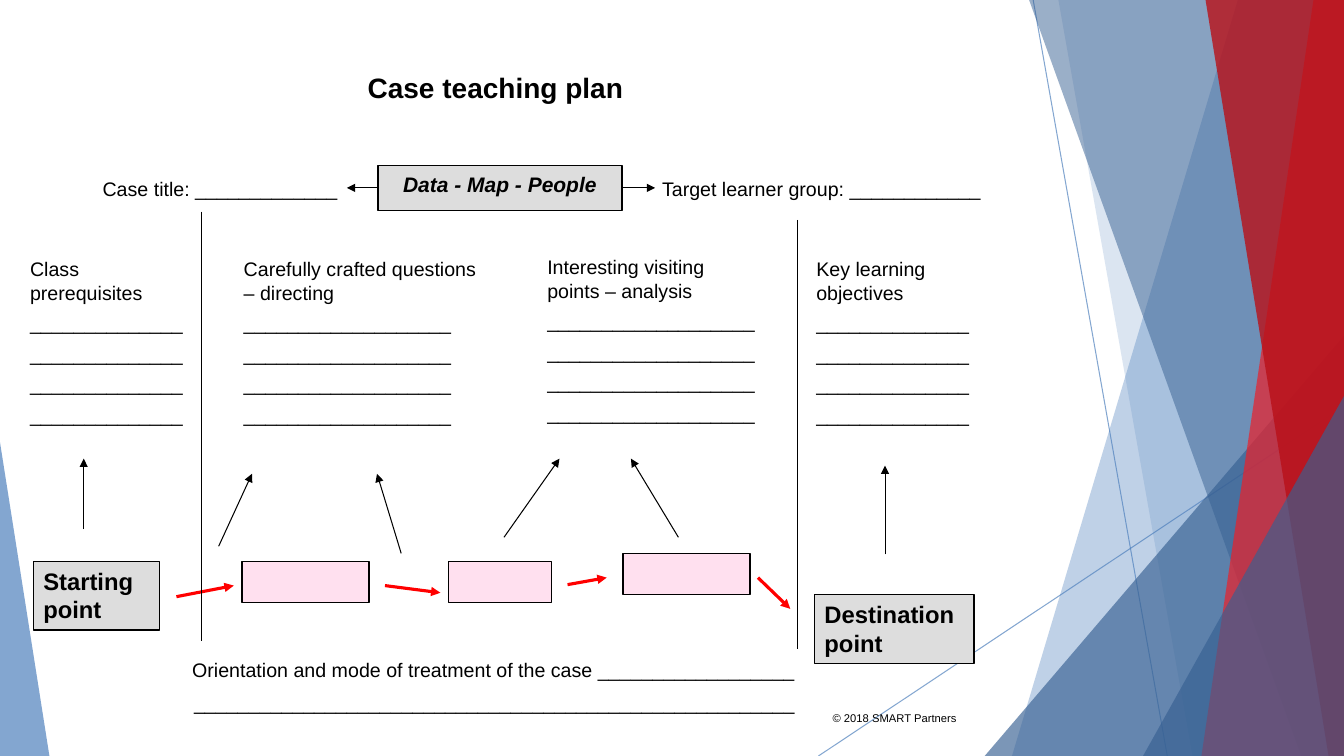
from dataclasses import dataclass, field
from typing import Any

import pptx
import pptx.dml.color
import pptx.enum.shapes
import pptx.enum.text
import pptx.oxml.ns
import pptx.util
from lxml import etree

Pt = pptx.util.Pt
qn = pptx.oxml.ns.qn
SHAPE = pptx.enum.shapes.MSO_SHAPE
ALIGN = pptx.enum.text.PP_ALIGN
ANCHOR = pptx.enum.text.MSO_ANCHOR
FIT = pptx.enum.text.MSO_AUTO_SIZE

WIDE, HIGH = 960, 540
COLORS = {
    "black": "000000", "grey": "DDDDDD", "pink": "FF99CC", "arrow": "FF0000",
    "blue": "4F81BD", "navy": "376092", "red": "EC1F29", "dark": "B91018",
}


@dataclass
class Facet:
    """A polygon of the backdrop; alpha is in percent."""
    points: list[tuple[float, float]]
    color: str
    alpha: int


@dataclass
class Line:
    start: tuple[float, float]
    end: tuple[float, float]
    color: str = "black"
    width: float = 0.75
    head: bool = True
    alpha: int = 100


@dataclass
class Label:
    """Text lines in a frame, with a line spacing for each line."""
    frame: tuple[float, float, float, float]
    lines: list[str]
    spaces: list[float] = field(default_factory=list)
    size: float = 14
    align: Any = ALIGN.LEFT
    style: dict[str, bool] = field(default_factory=dict)


@dataclass
class Box:
    label: Label
    color: str = "grey"
    alpha: int = 100


def band(top: float, base: float, color: str, alpha: int) -> Facet:
    """Reach from a slanted left edge to the right side of the slide."""
    return Facet([(top, 0), (WIDE, 0), (WIDE, HIGH), (base, HIGH)], color, alpha)


def wedge(side: float, top: float, tip: float, color: str, alpha: int) -> Facet:
    """Stand a right triangle against one side of the slide."""
    return Facet([(side, top), (side, HIGH), (tip, HIGH)], color, alpha)


def column(left: float, top: float, width: float, heads: list[str], dashes: int) -> Label:
    """Put four ruled lines under a heading."""
    return Label((left, top, width, 130), heads + ["_" * dashes] * 4,
                 [1.0] * len(heads) + [1.3] * 4)


def rgb(name: str) -> pptx.dml.color.RGBColor:
    return pptx.dml.color.RGBColor.from_string(COLORS[name])


def fade(shape: Any, alpha: int) -> None:
    """Make the first colour of the shape see-through."""
    if alpha < 100:
        color = next(shape.element.iter(qn("a:srgbClr")))
        etree.SubElement(color, qn("a:alpha"), val=str(alpha * 1000))


def paint(shape: Any, color: str, alpha: int) -> None:
    shape.shadow.inherit = False
    shape.fill.solid()
    shape.fill.fore_color.rgb = rgb(color)
    fade(shape, alpha)


def write(shape: Any, label: Label, anchor: Any = ANCHOR.TOP) -> None:
    frame = shape.text_frame
    layout = {"word_wrap": True, "auto_size": FIT.NONE, "vertical_anchor": anchor}
    for name, value in layout.items():
        setattr(frame, name, value)
    form = {"name": "Arial", "size": Pt(label.size), **label.style}
    spaces = label.spaces or [1.0] * len(label.lines)
    for row, (text, space) in enumerate(zip(label.lines, spaces)):
        para = frame.add_paragraph() if row else frame.paragraphs[0]
        para.text, para.alignment, para.line_spacing = text, label.align, space
        for name, value in form.items():
            setattr(para.runs[0].font, name, value)
        para.runs[0].font.color.rgb = rgb("black")


def draw_facet(shapes: Any, facet: Facet) -> None:
    spots = [(Pt(x), Pt(y)) for x, y in facet.points]
    pen = shapes.build_freeform(*spots[0])
    pen.add_line_segments(spots[1:], close=True)
    shape = pen.convert_to_shape()
    paint(shape, facet.color, facet.alpha)
    shape.line.fill.background()


def draw_line(shapes: Any, line: Line) -> Any:
    ends = [Pt(value) for value in line.start + line.end]
    link = shapes.add_connector(pptx.enum.shapes.MSO_CONNECTOR.STRAIGHT, *ends)
    link.line.color.rgb = rgb(line.color)
    link.line.width = Pt(line.width)
    fade(link, line.alpha)
    if line.head:
        etree.SubElement(link.line._get_or_add_ln(), qn("a:tailEnd"), type="triangle")
    etree.SubElement(link.element.spPr, qn("a:effectLst"))
    return link


def draw_box(shapes: Any, box: Box) -> Any:
    shape = shapes.add_shape(SHAPE.RECTANGLE, *map(Pt, box.label.frame))
    paint(shape, box.color, box.alpha)
    shape.line.color.rgb = rgb("black")
    shape.line.width = Pt(1)
    write(shape, box.label)
    return shape


def draw_label(shapes: Any, label: Label) -> None:
    write(shapes.add_textbox(*map(Pt, label.frame)), label)


BOLD = {"bold": True}
TITLE = Label((216, 46.8, 275.8, 31), ["Case teaching plan"], size=20,
              align=ALIGN.CENTER, style=BOLD)
RAYS = [
    Line((738, 0), (833.8, HIGH), "blue", head=False, alpha=70),
    Line((WIDE, 290.2), (584.6, HIGH), "blue", head=False, alpha=70),
]
FACETS = [
    band(884.2, 722.9, "blue", 36),
    band(756, 851.8, "blue", 20),
    wedge(WIDE, 239.8, 703.4, "navy", 66),
    band(735.1, 929.5, "navy", 50),
    band(938.2, 858.2, "red", 70),
    band(861.1, 949, "dark", 80),
    wedge(WIDE, 283, 816.5, "navy", 66),
    wedge(0, 316, 35.3, "blue", 70),
]
HUB = Box(Label((270, 118, 174.2, 32.4), ["Data - Map - People"], [1.05], 15,
                ALIGN.CENTER, {"bold": True, "italic": True}))
ENDS = [
    Box(Label((23.8, 401, 90, 49), ["Starting point"], size=17, style=BOLD)),
    Box(Label((581.8, 424.8, 113.8, 49), ["Destination", "point"], size=17, style=BOLD)),
]
STOPS = [Box(Label((left, top, width, 29.5), []), "pink", 30)
         for left, top, width in [(172.8, 401, 90.7), (320.4, 401, 73.4), (445, 395.3, 90.7)]]
ROUTE = [Line(start, end, "arrow", 2.25) for start, end in [
    ((126, 426.2), (167, 418.3)), ((275, 418.3), (314.6, 423.4)),
    ((541.4, 412.6), (564.5, 434.9)), ((405.4, 417.6), (433.4, 412.6))]]
RULES = [Line((x, top), (x, top + 306.4), head=False)
         for x, top in [(569.5, 157), (144, 151.2)]]
POINTERS = [Line(start, end) for start, end in [
    ((360, 383.8), (399.6, 327.6)), ((484.6, 383.8), (450.7, 327.6)),
    ((156.2, 390.2), (180, 338.4)), ((286.6, 395.3), (269.3, 338.4)),
    ((59.8, 378), (59.8, 327.6)), ((632.2, 396), (632.2, 332.6))]]
LABELS = [
    Label((465.8, 123.1, 250, 24.5), ["Target learner group: ____________"]),
    Label((66.2, 123.1, 185.8, 24), ["Case title: _____________"]),
    column(14.4, 180, 129.6, ["Class", "prerequisites"], 14),
    column(383.8, 178.6, 174.2, ["Interesting visiting", "points – analysis"], 19),
    column(167, 180, 187.2, ["Carefully crafted questions – directing"], 19),
    column(576, 180, 133.2, ["Key learning", "objectives"], 14),
    Label((127.4, 461.5, 447.8, 75),
          ["Orientation and mode of treatment of the case __________________", "_" * 55],
          [1.3, 1.4], align=ALIGN.RIGHT),
    Label((576.7, 504.7, 113.8, 17.3), ["© 2018 SMART Partners"], size=8, align=ALIGN.RIGHT),
]


def main() -> None:
    deck = pptx.Presentation()
    deck.slide_width, deck.slide_height = Pt(WIDE), Pt(HIGH)
    shapes = deck.slides.add_slide(deck.slide_layouts[5]).shapes
    for name, value in zip(("left", "top", "width", "height"), TITLE.frame):
        setattr(shapes.title, name, Pt(value))
    write(shapes.title, TITLE, ANCHOR.MIDDLE)
    for ray in RAYS:
        draw_line(shapes, ray)
    for facet in FACETS:
        draw_facet(shapes, facet)
    hub = draw_box(shapes, HUB)
    for box in ENDS + STOPS:
        draw_box(shapes, box)
    for line in ROUTE + RULES + POINTERS:
        draw_line(shapes, line)
    for side, start, end in [(1, 270, 247.7), (3, 444.2, 468)]:
        draw_line(shapes, Line((start, 134.2), (end, 134.2))).begin_connect(hub, side)
    for label in LABELS:
        draw_label(shapes, label)
    deck.save("out.pptx")


if __name__ == "__main__":
    main()
